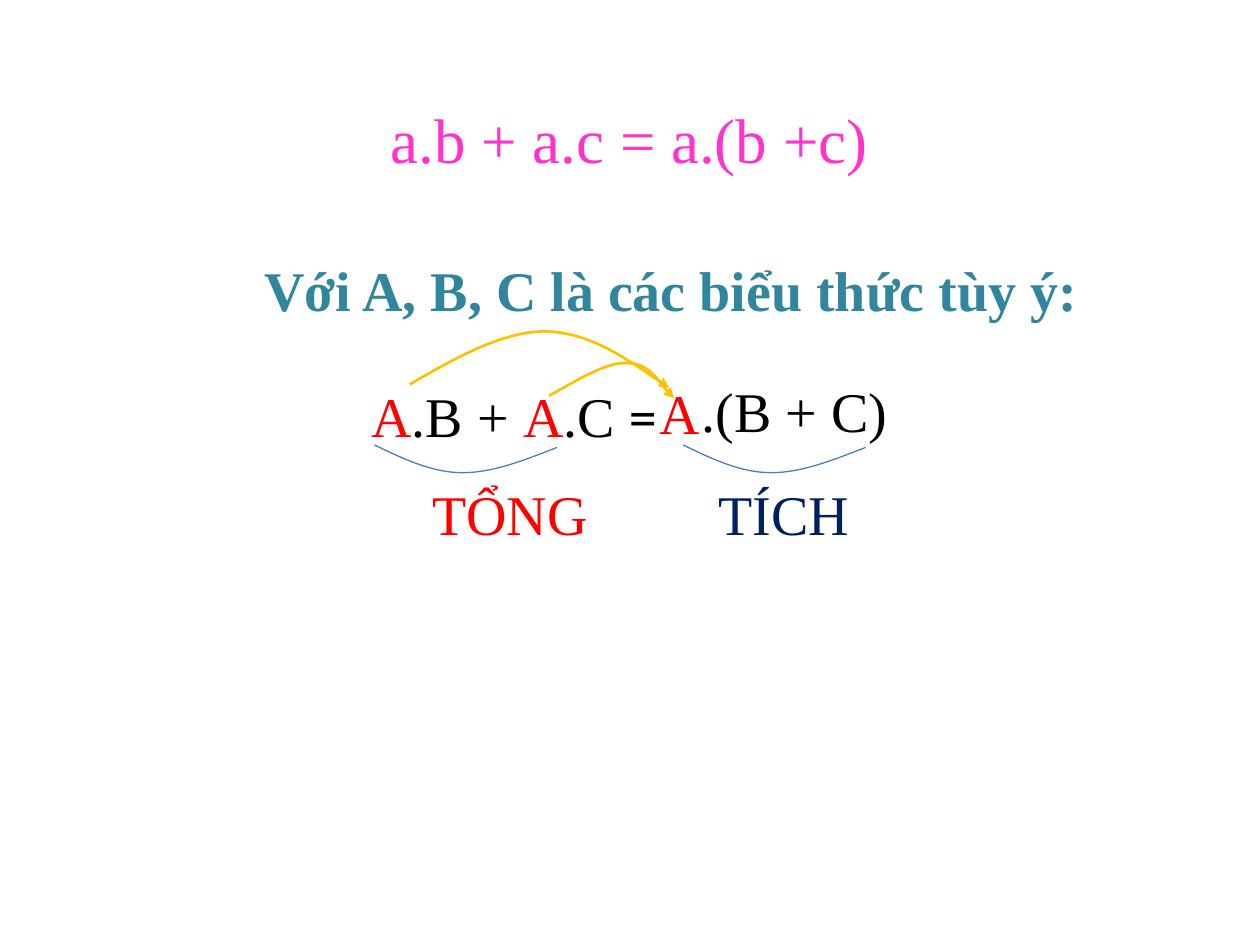
import dataclasses
import pptx
import pptx.dml.color
import pptx.enum.text
import pptx.oxml
import pptx.oxml.ns
import pptx.util
from pptx.util import Cm


@dataclasses.dataclass(frozen=True)
class Theme:
    serif: str = "Times New Roman"
    sans: str = "Calibri"
    title: int = 36
    body: int = 32
    thin: float = 0.75
    thick: float = 1.5
    pink: str = "FF33CC"
    teal: str = "31859C"
    red: str = "FF0000"
    black: str = "000000"
    navy: str = "002060"
    blue: str = "4B7EBC"
    gold: str = "FFC000"


def color(code):
    return pptx.dml.color.RGBColor.from_string(code)


class Board:
    """Draws styled text and curves on the current slide."""

    def __init__(self, deck, theme):
        self.theme = theme
        self.slide = deck.slides.add_slide(deck.slide_layouts[5])

    def style(self, shape, size, tint, runs, wrap=False, bold=False):
        frame = shape.text_frame
        frame.word_wrap = wrap
        kinds = pptx.enum.text.MSO_AUTO_SIZE
        frame.auto_size = kinds.NONE if wrap else kinds.SHAPE_TO_FIT_TEXT
        frame.vertical_anchor = pptx.enum.text.MSO_ANCHOR.TOP
        para = frame.paragraphs[0]
        para.alignment = pptx.enum.text.PP_ALIGN.LEFT
        para.font.name = self.theme.serif
        para.font.size = pptx.util.Pt(size)
        para.font.bold = bold
        para.font.color.rgb = color(tint)
        for words, hue, face in runs:
            run = para.add_run()
            run.text = words
            if hue:
                run.font.color.rgb = color(hue)
            if face:
                run.font.name = face

    def title(self, words, left, top, width, height):
        shape = self.slide.shapes.title
        shape.left, shape.top = Cm(left), Cm(top)
        shape.width, shape.height = Cm(width), Cm(height)
        self.style(shape, self.theme.title, self.theme.pink, [(words, None, None)])

    def text(self, runs, tint, left, top, width, height=1.63, **look):
        if isinstance(runs, str):
            runs = [(runs, None, None)]
        box = self.slide.shapes.add_textbox(Cm(left), Cm(top), Cm(width), Cm(height))
        self.style(box, self.theme.body, tint, runs, **look)

    def curve(self, points, tint, weight, arrow=False):
        start, *rest = [(Cm(x), Cm(y)) for x, y in points]
        pen = self.slide.shapes.build_freeform(*start)
        pen.add_line_segments(rest, close=False)
        shape = pen.convert_to_shape()
        shape.shadow.inherit = False
        shape.fill.background()
        shape.line.color.rgb = color(tint)
        shape.line.width = pptx.util.Pt(weight)
        space = pptx.oxml.ns.nsdecls("a")
        route = shape.element.xpath(".//a:path")[0]
        lines = route.xpath("a:lnTo")
        for first in range(0, len(lines), 3):
            bend = pptx.oxml.parse_xml(f"<a:cubicBezTo {space}/>")
            for line in lines[first:first + 3]:
                bend.append(line[0])
                route.remove(line)
            route.append(bend)
        if arrow:
            stroke = shape.element.xpath(".//a:ln")[0]
            stroke.append(pptx.oxml.parse_xml(
                f"<a:tailEnd {space} type='triangle'/>"))

    def brace(self, left, top):
        bow = [(0, 0), (0.58, 0.28), (1.16, 0.56), (1.78, 0.56),
               (2.39, 0.56), (3.04, 0.3), (3.68, 0.05)]
        self.curve([(left + x, top + y) for x, y in bow],
                   self.theme.blue, self.theme.thin)

    def arc(self, points):
        self.curve(points, self.theme.gold, self.theme.thick, arrow=True)


def main():
    deck = pptx.Presentation()
    deck.slide_width, deck.slide_height = Cm(25.4), Cm(19.05)
    theme = Theme()
    board = Board(deck, theme)

    board.title("a.b + a.c = a.(b +c)", 7.62, 1.89, 10.24, 1.8)
    board.text("Với A, B, C là các biểu thức tùy ý:", theme.teal,
               5.08, 5.03, 17.04, 1.47, wrap=True, bold=True)
    board.text([("A", theme.red, None), (".B + ", None, None),
                ("A", theme.red, None), (".C ", None, None),
                ("=", None, theme.sans)], theme.black, 7.24, 7.57, 6.5)
    for left in (7.55, 13.77):
        board.brace(left, 8.97)
    board.text("A", theme.red, 13.04, 7.5, 1.35)
    board.arc([(8.26, 7.75), (9.19, 7.21), (10.13, 6.68), (11, 6.68),
               (11.89, 6.71), (12.67, 7.26), (13.49, 7.82)])
    board.arc([(11.07, 7.98), (11.66, 7.65), (12.24, 7.29), (12.65, 7.32),
               (13.08, 7.32), (13.44, 7.92), (13.59, 8.03)])
    board.text(".(B + C)", theme.black, 13.9, 7.47, 4.29)
    board.text("TỔNG", theme.red, 8.46, 9.54, 3.68)
    board.text("TÍCH", theme.navy, 14.23, 9.54, 3.18)
    deck.save("out.pptx")


if __name__ == "__main__":
    main()
